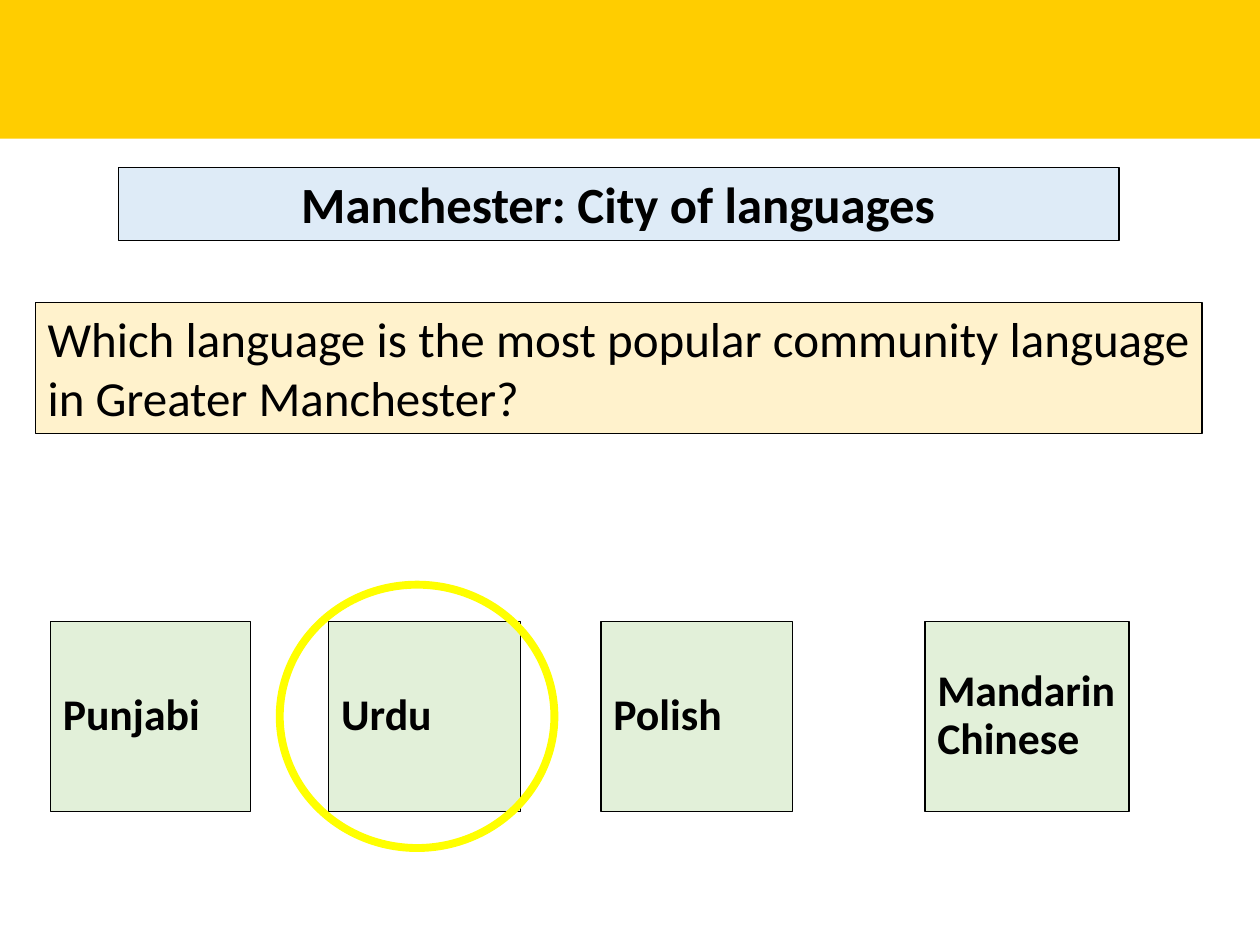
from pptx import Presentation
from pptx.dml.color import RGBColor
from pptx.enum.shapes import MSO_SHAPE as Preset
from pptx.enum.text import MSO_ANCHOR as Anchor, MSO_AUTO_SIZE as AutoSize, PP_ALIGN as Align
from pptx.util import Inches, Pt

COLORS = {"band": "FFCD00", "heading": "DEEBF7", "question": "FFF2CC",
          "answer": "E2F0D9", "ring": "FFFF00", "ink": "000000"}
HEADING = "Manchester: City of languages"
QUESTION = "Which language is the most popular community language in Greater Manchester?"
ANSWERS = [("Punjabi", 0.4, 1.59), ("Urdu", 2.61, 1.52),
           ("Polish", 4.77, 1.52), ("Mandarin Chinese", 7.34, 1.62)]
ANSWER_TOP, ANSWER_HEIGHT = 4.93, 1.51

HEADING_STYLE = {"size": 29, "bold": True, "align": Align.CENTER,
                 "anchor": Anchor.BOTTOM, "spacing": 0.9}
QUESTION_STYLE = {"size": 28, "bold": False, "align": Align.JUSTIFY,
                  "anchor": Anchor.TOP, "spacing": 1.0}
ANSWER_STYLE = {"size": 25, "bold": True, "align": Align.JUSTIFY,
                "anchor": Anchor.MIDDLE, "spacing": 0.9}


def rgb(name):
    return RGBColor.from_string(COLORS[name])


def paint(shape, fill=None, line=None, width=0.75):
    if fill:
        shape.fill.solid()
        shape.fill.fore_color.rgb = rgb(fill)
    else:
        shape.fill.background()
    if line:
        shape.line.color.rgb = rgb(line)
        shape.line.width = Pt(width)
    else:
        shape.line.fill.background()


def add_preset(slide, preset, box, **look):
    shape = slide.shapes.add_shape(preset, *map(Inches, box))
    shape.shadow.inherit = False
    paint(shape, **look)
    return shape


def write(shape, text, style):
    frame = shape.text_frame
    frame.text = text
    paragraph = frame.paragraphs[0]
    formats = [
        (frame, {"word_wrap": True, "auto_size": AutoSize.NONE,
                 "vertical_anchor": style["anchor"]}),
        (paragraph, {"alignment": style["align"], "line_spacing": style["spacing"]}),
        (paragraph.runs[0].font, {"name": "Calibri", "size": Pt(style["size"]),
                                  "bold": style["bold"]}),
    ]
    for target, values in formats:
        for key, value in values.items():
            setattr(target, key, value)
    paragraph.runs[0].font.color.rgb = rgb("ink")


def main():
    """Build the Manchester languages quiz slide."""
    deck = Presentation()
    deck.slide_width, deck.slide_height = Inches(10), Inches(7.5)
    slide = deck.slides.add_slide(deck.slide_layouts[5])

    add_preset(slide, Preset.RECTANGLE, (0, 0, 10, 1.1), fill="band")

    heading = slide.shapes.title
    for side, length in {"left": 0.94, "top": 1.33, "width": 7.94, "height": 0.58}.items():
        setattr(heading, side, Inches(length))
    paint(heading, fill="heading", line="ink")
    write(heading, HEADING, HEADING_STYLE)

    question = add_preset(slide, Preset.RECTANGLE, (0.28, 2.4, 9.26, 1.04),
                          fill="question", line="ink")
    write(question, QUESTION, QUESTION_STYLE)

    for language, left, width in ANSWERS:
        answer = add_preset(slide, Preset.RECTANGLE, (left, ANSWER_TOP, width, ANSWER_HEIGHT),
                            fill="answer", line="ink")
        write(answer, language, ANSWER_STYLE)

    add_preset(slide, Preset.OVAL, (2.22, 4.64, 2.18, 2.09), line="ring", width=4.5)
    deck.save("out.pptx")


if __name__ == "__main__":
    main()
